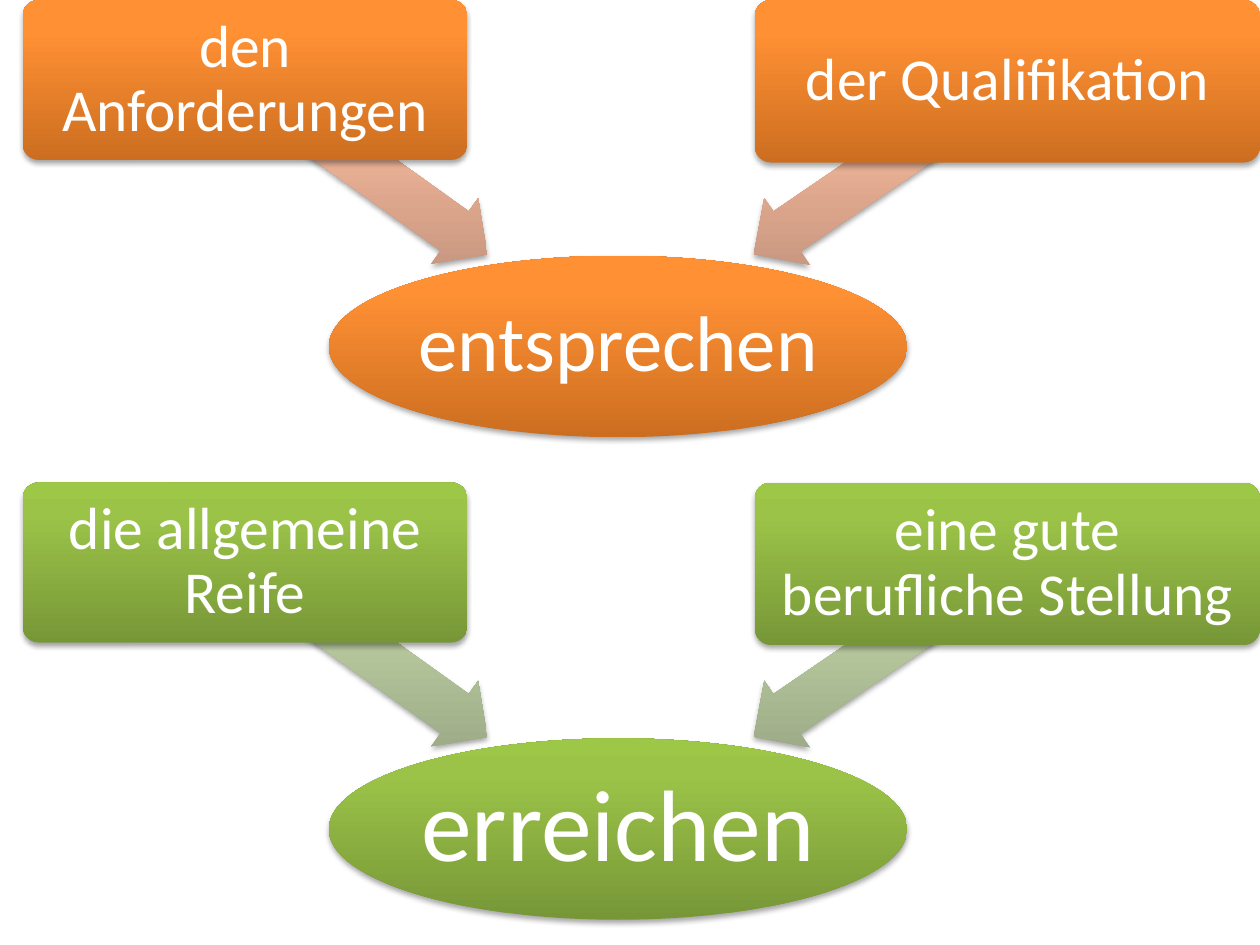
"""Build a slide with two diagrams of phrases leading to a verb."""
import pptx
import pptx.dml.color
import pptx.enum.shapes
import pptx.enum.text
import pptx.oxml
import pptx.oxml.ns
import pptx.util

Inches = pptx.util.Inches
Kind = pptx.enum.shapes.MSO_SHAPE

DIAGRAMS = [
    {"verb": "entsprechen", "size": 45, "inset": 0.03,
     "phrases": ["den Anforderungen", "der Qualifikation"],
     "strong": ["CC6E20", "FF9034", "FF9136"],
     "pale": ["C3937C", "FDBFA1", "FFBFA1"]},
    {"verb": "erreichen", "size": 58, "inset": 0.04,
     "phrases": ["die allgemeine Reife", "eine gute berufliche Stellung"],
     "strong": ["779737", "9BC348", "9DC746"],
     "pale": ["98A683", "C6D8AA", "C7DAAA"]},
]
DIAGRAM_STEP = 3.83
VERB_PLACE = (2.61, 2.03, 4.59, 1.44)
PHRASE_PLACES = [(0.18, 0, 3.53, 1.27), (5.99, 0, 4.01, 1.29)]
ARROWS = [((1.72, 1.01, 2.37, 0.64), 215.6), ((5.77, 1.01, 2.44, 0.64), 325.7)]
STOPS = [0, 80, 100]


def rgb(value):
    return pptx.dml.color.RGBColor.from_string(value)


def add_style(shape, colours):
    stops = "".join(
        f'<a:gs pos="{stop * 1000}"><a:srgbClr val="{colour}"/></a:gs>'
        for stop, colour in zip(STOPS, colours))
    namespace = pptx.oxml.ns.nsdecls("a")
    gradient = pptx.oxml.parse_xml(
        f'<a:gradFill {namespace} rotWithShape="0"><a:gsLst>{stops}</a:gsLst>'
        '<a:lin ang="16200000" scaled="0"/></a:gradFill>')
    shadow = pptx.oxml.parse_xml(
        f'<a:effectLst {namespace}><a:outerShdw blurRad="{pptx.util.Pt(3.1)}" '
        f'dist="{pptx.util.Pt(1.8)}" dir="5400000" rotWithShape="0">'
        '<a:srgbClr val="000000"><a:alpha val="35000"/></a:srgbClr>'
        '</a:outerShdw></a:effectLst>')
    shape.line.fill.background()
    properties = shape.fill._xPr
    properties.insert_element_before(gradient, "a:ln")
    properties.append(shadow)


def add_shape(group, kind, place, top, colours):
    left, offset, width, height = place
    shape = group.shapes.add_shape(
        kind, Inches(left), Inches(top + offset), Inches(width), Inches(height))
    add_style(shape, colours)
    return shape


def write(shape, text, size, inset):
    frame = shape.text_frame
    frame.word_wrap = True
    frame.vertical_anchor = pptx.enum.text.MSO_ANCHOR.MIDDLE
    frame.margin_left = frame.margin_right = Inches(inset)
    frame.margin_top = frame.margin_bottom = Inches(inset)
    para = frame.paragraphs[0]
    para.text = text
    para.alignment = pptx.enum.text.PP_ALIGN.CENTER
    para.line_spacing = 0.9
    para.font.name = "Calibri"
    para.font.size = pptx.util.Pt(size)
    para.font.color.rgb = rgb("FFFFFF")


def add_diagram(page, diagram, top):
    group = page.shapes.add_group_shape()
    verb = add_shape(group, Kind.OVAL, VERB_PLACE, top, diagram["strong"])
    write(verb, diagram["verb"], diagram["size"], diagram["inset"])
    for phrase, place, (arrow_place, angle) in zip(
            diagram["phrases"], PHRASE_PLACES, ARROWS):
        arrow = add_shape(group, Kind.LEFT_ARROW, arrow_place, top, diagram["pale"])
        arrow.rotation = angle
        arrow.adjustments[0] = 0.6
        arrow.adjustments[1] = 0.5
        box = add_shape(group, Kind.ROUNDED_RECTANGLE, place, top, diagram["strong"])
        box.adjustments[0] = 0.1
        write(box, phrase, 34, 0.07)


def main():
    deck = pptx.Presentation()
    deck.slide_width, deck.slide_height = Inches(10), Inches(7.5)
    page = deck.slides.add_slide(deck.slide_layouts[6])
    for index, diagram in enumerate(DIAGRAMS):
        add_diagram(page, diagram, index * DIAGRAM_STEP)
    deck.save("out.pptx")


if __name__ == "__main__":
    main()
